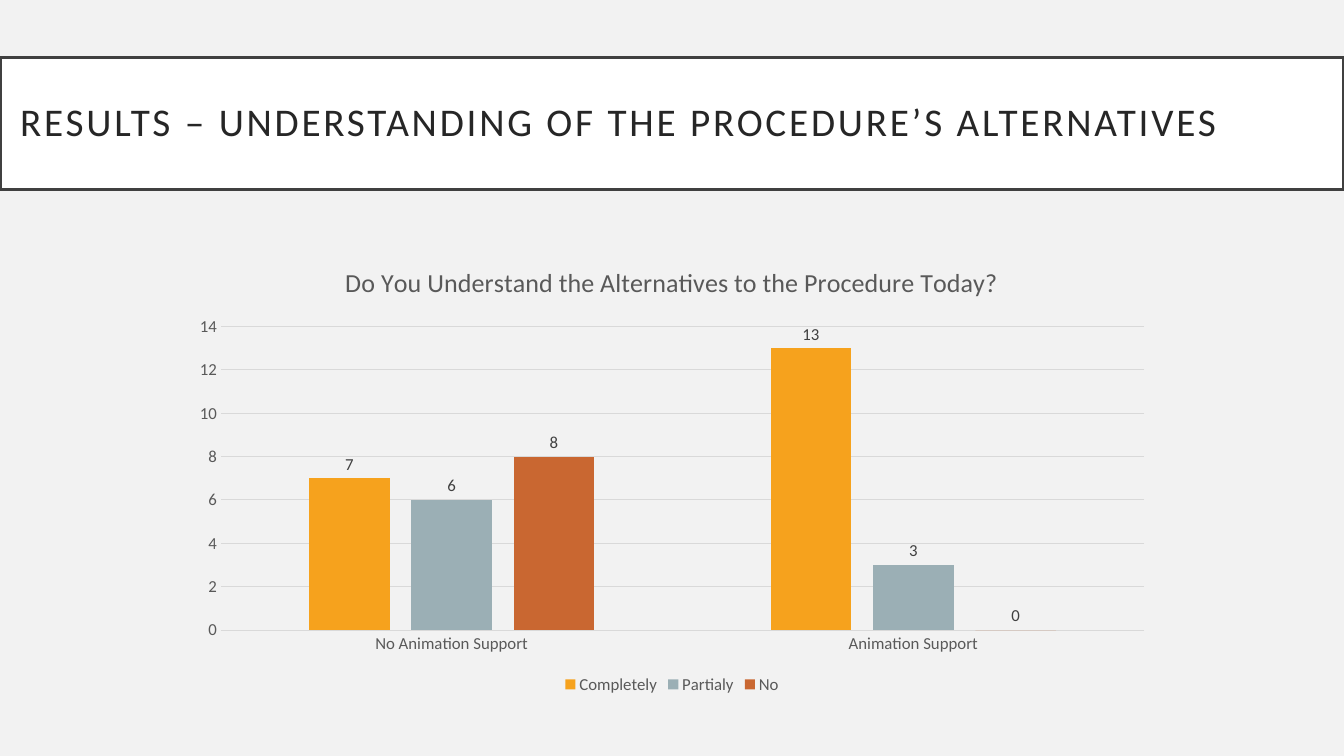
from dataclasses import dataclass

from pptx import Presentation
from pptx.chart.data import CategoryChartData
from pptx.dml.color import RGBColor
from pptx.enum.chart import XL_CHART_TYPE as ChartType
from pptx.enum.chart import XL_LABEL_POSITION as LabelPosition
from pptx.enum.chart import XL_LEGEND_POSITION as LegendPosition
from pptx.enum.chart import XL_TICK_MARK as TickMark
from pptx.enum.shapes import MSO_SHAPE as Shape
from pptx.enum.text import MSO_ANCHOR as Anchor
from pptx.enum.text import PP_ALIGN as Align
from pptx.util import Cm, Pt

HEADING = "RESULTS – UNDERSTANDING OF THE PROCEDURE’S ALTERNATIVES"
QUESTION = "Do You Understand the Alternatives to the Procedure Today?"
GROUPS = ["No Animation Support", "Animation Support"]
ANSWERS = [
    ("Completely", (7, 13), "F6A21D"),
    ("Partialy", (6, 3), "9BAFB5"),
    ("No", (8, 0), "C96731"),
]
AXIS_MAX, AXIS_STEP = 14, 2


@dataclass(frozen=True)
class Theme:
    font: str = "Calibri"
    background: str = "F2F2F2"
    banner: str = "FFFFFF"
    border: str = "404040"
    heading: str = "262626"
    muted: str = "595959"
    label: str = "404040"
    grid: str = "D9D9D9"
    heading_size: float = 28
    question_size: float = 18.6
    chart_size: float = 12


THEME = Theme()
SLIDE_W, SLIDE_H = Cm(33.87), Cm(19.05)
BANNER_TOP, BANNER_H, BANNER_INSET = Cm(1.45), Cm(3.33), Cm(0.51)
CHART_TOP, CHART_W, CHART_H = Cm(6.17), Cm(24.79), Cm(11.43)


def rgb(code):
    return RGBColor.from_string(code)


def style_font(font, size, color):
    font.name, font.size, font.bold = THEME.font, Pt(size), False
    font.color.rgb = rgb(color)


def style_line(line, color, width):
    line.color.rgb = rgb(color)
    line.width = Pt(width)


def write_text(frame, text, *, size, color, align=None, line_spacing=None, tracking=None):
    paragraph = frame.paragraphs[0]
    if align is not None:
        paragraph.alignment = align
    if line_spacing is not None:
        paragraph.line_spacing = line_spacing
    run = paragraph.add_run()
    run.text = text
    style_font(run.font, size, color)
    if tracking is not None:
        run.font._element.set("spc", str(tracking * 100))


def add_banner(slide):
    banner = slide.shapes.add_shape(Shape.RECTANGLE, 0, BANNER_TOP, SLIDE_W, BANNER_H)
    banner.shadow.inherit = False
    banner.fill.solid()
    banner.fill.fore_color.rgb = rgb(THEME.banner)
    style_line(banner.line, THEME.border, 2.5)
    frame = banner.text_frame
    frame.word_wrap = True
    frame.vertical_anchor = Anchor.MIDDLE
    frame.margin_left = frame.margin_right = BANNER_INSET
    frame.margin_top = frame.margin_bottom = BANNER_INSET
    write_text(frame, HEADING, size=THEME.heading_size, color=THEME.heading,
               align=Align.LEFT, line_spacing=0.9, tracking=2)


def style_axes(chart):
    for axis in (chart.category_axis, chart.value_axis):
        axis.major_tick_mark = axis.minor_tick_mark = TickMark.NONE
        style_font(axis.tick_labels.font, THEME.chart_size, THEME.muted)
    style_line(chart.category_axis.format.line, THEME.grid, 0.75)
    counts = chart.value_axis
    counts.minimum_scale, counts.maximum_scale = 0, AXIS_MAX
    counts.major_unit = AXIS_STEP
    counts.format.line.fill.background()
    counts.has_major_gridlines = True
    style_line(counts.major_gridlines.format.line, THEME.grid, 0.75)


def add_answer_chart(slide):
    answers = CategoryChartData()
    answers.categories = GROUPS
    for name, counts, _ in ANSWERS:
        answers.add_series(name, counts)
    chart = slide.shapes.add_chart(
        ChartType.COLUMN_CLUSTERED, (SLIDE_W - CHART_W) // 2, CHART_TOP,
        CHART_W, CHART_H, answers).chart
    style_font(chart.font, THEME.chart_size, THEME.muted)

    chart.has_title = True
    write_text(chart.chart_title.text_frame, QUESTION,
               size=THEME.question_size, color=THEME.muted)
    chart.chart_title.include_in_layout = False

    chart.has_legend = True
    chart.legend.position = LegendPosition.BOTTOM
    chart.legend.include_in_layout = False
    style_font(chart.legend.font, THEME.chart_size, THEME.muted)
    style_axes(chart)

    plot = chart.plots[0]
    plot.vary_by_categories = False
    plot.gap_width, plot.overlap = 219, -27
    for series, (_, _, color) in zip(plot.series, ANSWERS):
        series.format.fill.solid()
        series.format.fill.fore_color.rgb = rgb(color)
        series.invert_if_negative = False
        labels = series.data_labels
        labels.show_value = True
        labels.position = LabelPosition.OUTSIDE_END
        style_font(labels.font, THEME.chart_size, THEME.label)


def main():
    deck = Presentation()
    deck.slide_width, deck.slide_height = SLIDE_W, SLIDE_H
    slide = deck.slides.add_slide(deck.slide_layouts[6])
    slide.background.fill.solid()
    slide.background.fill.fore_color.rgb = rgb(THEME.background)
    add_banner(slide)
    add_answer_chart(slide)
    deck.save("out.pptx")


if __name__ == "__main__":
    main()
